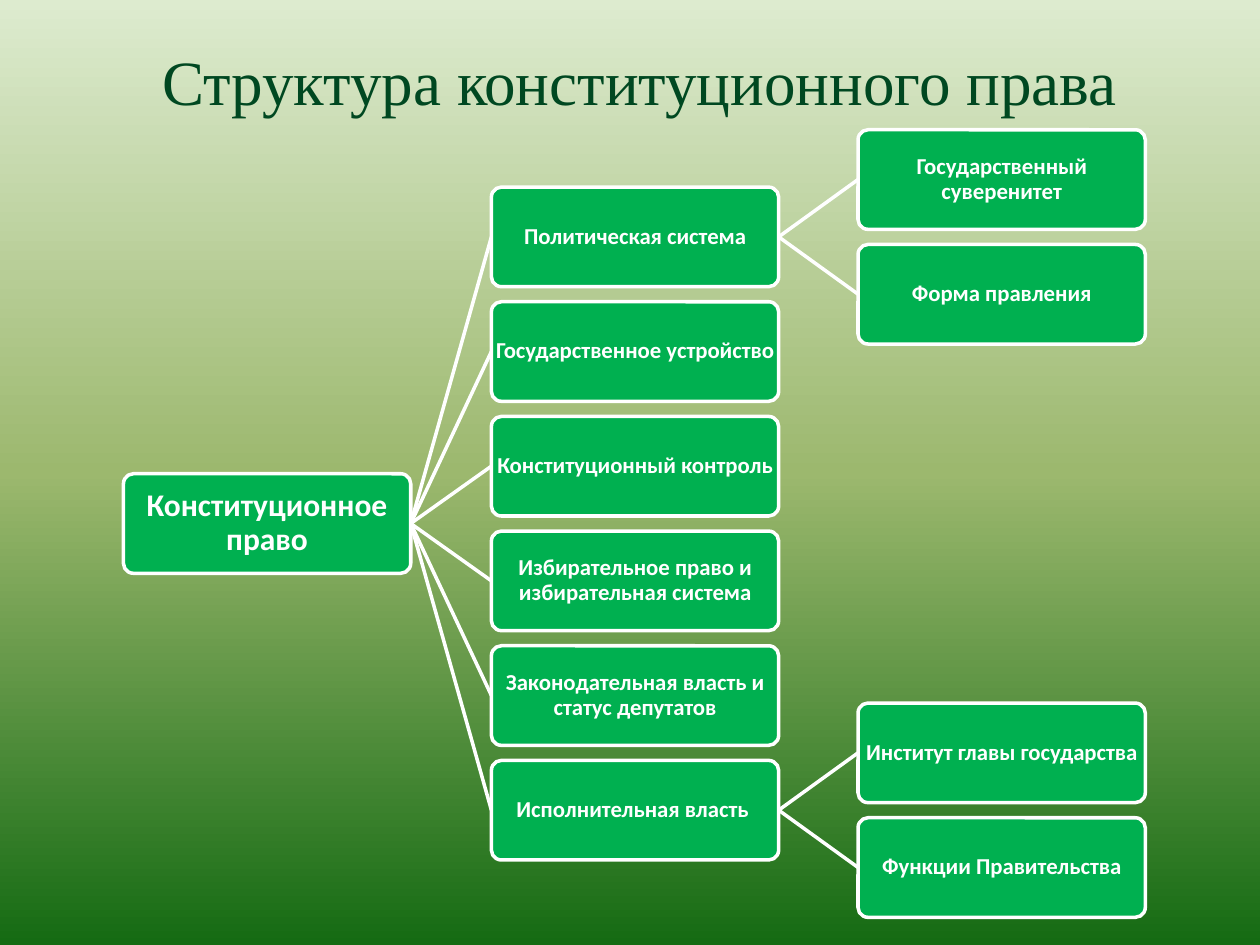
from copy import deepcopy

from lxml import etree
from pptx import Presentation
from pptx.dml.color import RGBColor
from pptx.enum.shapes import MSO_CONNECTOR, MSO_SHAPE
from pptx.enum.text import MSO_ANCHOR, MSO_AUTO_SIZE, PP_ALIGN
from pptx.oxml.ns import qn
from pptx.util import Inches, Pt

CENTER = PP_ALIGN.CENTER
MIDDLE = MSO_ANCHOR.MIDDLE
ROUNDED = MSO_SHAPE.ROUNDED_RECTANGLE
STRAIGHT = MSO_CONNECTOR.STRAIGHT

# Content: the root, its branches and their leaves
TITLE = "Структура конституционного права"
ROOT = "Конституционное право"
BRANCHES = [
    ("Политическая система", ["Государственный суверенитет", "Форма правления"]),
    ("Государственное устройство", []),
    ("Конституционный контроль", []),
    ("Избирательное право и избирательная система", []),
    ("Законодательная власть и статус депутатов", []),
    ("Исполнительная власть ", ["Институт главы государства", "Функции Правительства"]),
]

COLORS = {"title": "004821", "box": "00B050", "line": "FFFFFF", "text": "FFFFFF"}
BACKGROUND = [(0, "DDEBCF"), (0.5, "9CB86E"), (1, "156B13")]

# Layout in inches
COLUMNS = [0.98, 3.9, 6.81]
BOX_WIDTH, BOX_HEIGHT = 2.28, 0.79
FIRST_MIDDLE, ROW_STEP = 1.88, 0.91


def rgb(name):
    return RGBColor.from_string(COLORS[name])


def spread(middle, count):
    """Middles of count rows centred on the given height."""
    return [middle + (row - (count - 1) / 2) * ROW_STEP for row in range(count)]


def style_text(para, size, font, color, bold=False):
    para.alignment = CENTER
    for span in para.runs:
        span.font.size = Pt(size)
        span.font.name = font
        span.font.bold = bold
        span.font.color.rgb = rgb(color)


def add_box(slide, text, column, middle, size=13):
    box = slide.shapes.add_shape(
        ROUNDED, Inches(COLUMNS[column]), Inches(middle - BOX_HEIGHT / 2),
        Inches(BOX_WIDTH), Inches(BOX_HEIGHT))
    box.adjustments[0] = 0.1
    box.shadow.inherit = False
    box.fill.solid()
    box.fill.fore_color.rgb = rgb("box")
    box.line.color.rgb = rgb("line")
    box.line.width = Pt(2)
    frame = box.text_frame
    frame.word_wrap = True
    frame.vertical_anchor = MIDDLE
    frame.margin_left = frame.margin_right = frame.margin_top = frame.margin_bottom = 0
    frame.text = text
    para = frame.paragraphs[0]
    para.line_spacing = 0.9
    style_text(para, size, "Calibri", "text", bold=True)


def add_link(slide, column, start, end):
    """Line from a box in the previous column to one in this column."""
    link = slide.shapes.add_connector(
        STRAIGHT, Inches(COLUMNS[column - 1] + BOX_WIDTH), Inches(start),
        Inches(COLUMNS[column]), Inches(end))
    link.line.color.rgb = rgb("line")
    link.line.width = Pt(2)
    etree.SubElement(link._element.spPr, qn("a:effectLst"))


def add_child(slide, text, column, parent_middle, middle):
    add_link(slide, column, parent_middle, middle)
    add_box(slide, text, column, middle)


def paint_background(slide):
    fill = slide.background.fill
    fill.gradient()
    fill.gradient_angle = 270
    stop_list = fill.gradient_stops[0]._gs.getparent()
    stop_list.append(deepcopy(stop_list[0]))
    for stop, (position, color) in zip(fill.gradient_stops, BACKGROUND):
        stop.position = position
        stop.color.rgb = RGBColor.from_string(color)


deck = Presentation()
deck.slide_width, deck.slide_height = Inches(10), Inches(7.5)
slide = deck.slides.add_slide(deck.slide_layouts[6])
paint_background(slide)

# Title
title = slide.shapes.add_textbox(Inches(1.15), Inches(0.29), Inches(7.85), Inches(0.71))
title.text_frame.word_wrap = False
title.text_frame.auto_size = MSO_AUTO_SIZE.SHAPE_TO_FIT_TEXT
title.text_frame.text = TITLE
style_text(title.text_frame.paragraphs[0], 36, "Times New Roman", "title")

# Tree
root_middle = FIRST_MIDDLE + (len(BRANCHES) - 1) / 2 * ROW_STEP
add_box(slide, ROOT, 0, root_middle, size=18)
for (branch, leaves), middle in zip(BRANCHES, spread(root_middle, len(BRANCHES))):
    add_child(slide, branch, 1, root_middle, middle)
    for leaf, leaf_middle in zip(leaves, spread(middle, len(leaves))):
        add_child(slide, leaf, 2, middle, leaf_middle)

deck.save("out.pptx")
